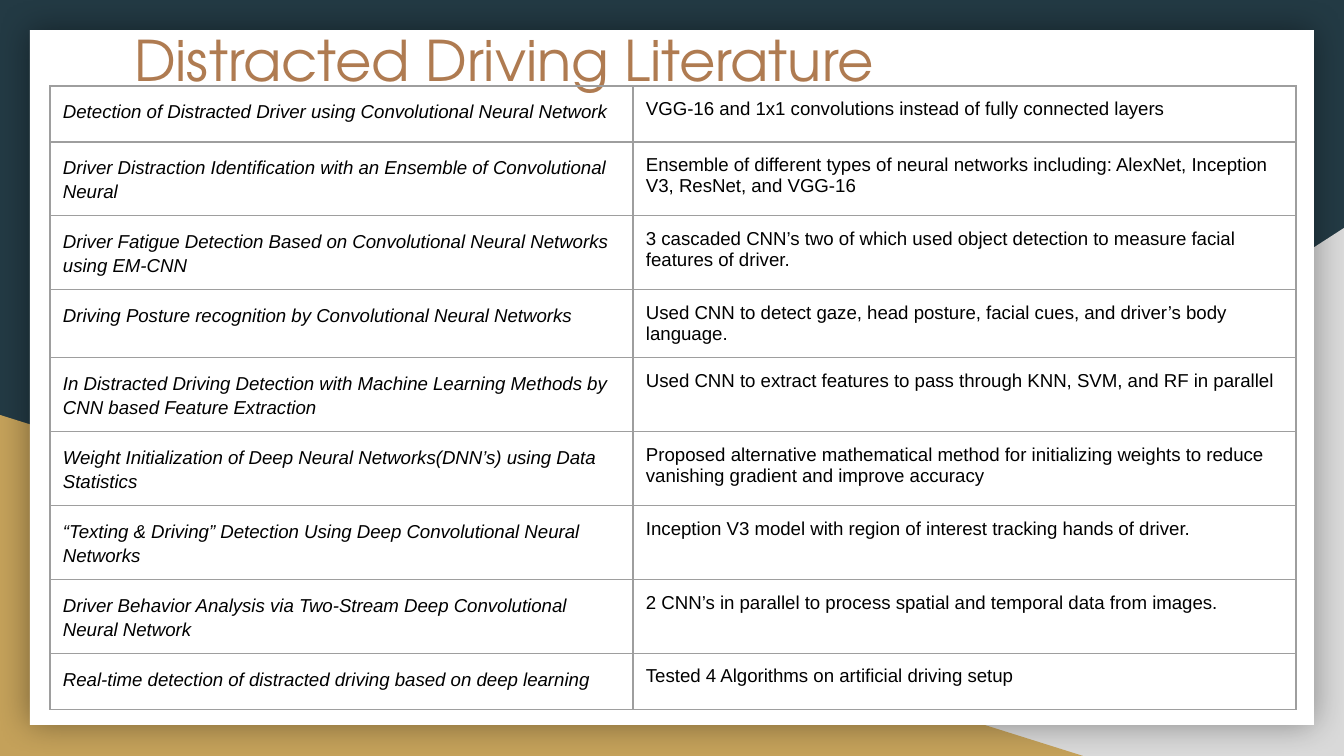
from lxml import etree
from pptx import Presentation
from pptx.dml.color import RGBColor
from pptx.enum.shapes import MSO_SHAPE
from pptx.enum.text import MSO_ANCHOR, MSO_AUTO_SIZE, PP_ALIGN
from pptx.oxml import parse_xml
from pptx.oxml.ns import nsdecls, qn
from pptx.util import Pt

RECT, TRIANGLE = MSO_SHAPE.RECTANGLE, MSO_SHAPE.RIGHT_TRIANGLE
TOP, LEFT, NO_FIT = MSO_ANCHOR.TOP, PP_ALIGN.LEFT, MSO_AUTO_SIZE.NONE

EMU_PER_PX = 914400 / 134.4
INSET = 13
COLORS = {
    "navy": "233A44",
    "gray": "D9D9D9",
    "gold": "C4A15A",
    "panel": "FFFFFF",
    "title": "AF7B51",
    "text": "000000",
    "border": "9E9E9E",
}
COLUMN_WIDTHS = [583, 663]
ROW_HEIGHTS = [56, 63, 63, 63, 56, 56, 56, 66, 56]
LITERATURE = [
    ("Detection of Distracted Driver using Convolutional Neural Network",
     "VGG-16 and 1x1 convolutions instead of fully connected layers"),
    ("Driver Distraction Identification with an Ensemble of Convolutional Neural",
     "Ensemble of different types of neural networks including: AlexNet, "
     "Inception V3, ResNet, and VGG-16"),
    ("Driver Fatigue Detection Based on Convolutional Neural Networks using EM-CNN",
     "3 cascaded CNN’s two of which used object detection to measure facial "
     "features of driver."),
    ("Driving Posture recognition by Convolutional Neural Networks",
     "Used CNN to detect gaze, head posture, facial cues, and driver’s body language."),
    ("In Distracted Driving Detection with Machine Learning Methods by CNN based "
     "Feature Extraction",
     "Used CNN to extract features to pass through KNN, SVM, and RF in parallel"),
    ("Weight Initialization of Deep Neural Networks(DNN’s) using Data Statistics",
     "Proposed alternative mathematical method for initializing weights to reduce "
     "vanishing gradient and improve accuracy"),
    ("“Texting & Driving” Detection Using Deep Convolutional Neural Networks",
     "Inception V3 model with region of interest tracking hands of driver."),
    ("Driver Behavior Analysis via Two-Stream Deep Convolutional Neural Network",
     "2 CNN’s in parallel to process spatial and temporal data from images."),
    ("Real-time detection of distracted driving based on deep learning",
     "Tested 4 Algorithms on artificial driving setup"),
]


def px(n):
    """Turn pixels into EMU."""
    return round(n * EMU_PER_PX)


def rgb(name):
    """Look up a named colour."""
    return RGBColor.from_string(COLORS[name])


def set_font(font, name, size, color, italic=False):
    """Set the face, size, colour and slant of a font."""
    font.name, font.size, font.italic = name, Pt(size), italic
    font.color.rgb = rgb(color)


def add_block(slide, kind, box, color, flip=False):
    """Add a plain filled shape without an outline."""
    sp = slide.shapes.add_shape(kind, *map(px, box))
    sp.shadow.inherit = False
    sp.fill.solid()
    sp.fill.fore_color.rgb = rgb(color)
    sp.line.fill.background()
    if flip:
        sp._element.spPr.get_or_add_xfrm().set("flipH", "1")
    return sp


def add_glow_shadow(sp):
    """Give a shape a soft, centred shadow."""
    effects = sp._element.spPr.find(qn("a:effectLst"))
    effects.append(parse_xml(
        f'<a:outerShdw {nsdecls("a")} blurRad="{Pt(18)}" dist="0" dir="0" '
        'algn="ctr" rotWithShape="0"><a:srgbClr val="000000">'
        '<a:alpha val="40000"/></a:srgbClr></a:outerShdw>'))


def set_title(slide, text, box):
    """Fill the title placeholder and bring it to the front."""
    sp = slide.shapes.title
    sp.left, sp.top, sp.width, sp.height = map(px, box)
    tf = sp.text_frame
    tf.text = text
    tf.word_wrap, tf.auto_size, tf.vertical_anchor = True, NO_FIT, TOP
    tf.margin_left = tf.margin_right = tf.margin_top = tf.margin_bottom = px(INSET)
    p = tf.paragraphs[0]
    p.alignment = LEFT
    set_font(p.font, "TeX Gyre Adventor", 30, "title")
    slide.shapes._spTree.append(sp._element)


def set_borders(cell):
    """Draw a thin line on all four sides of a cell."""
    tc_pr = cell._tc.get_or_add_tcPr()
    for side in "LRTB":
        ln = etree.SubElement(tc_pr, qn(f"a:ln{side}"), w=str(Pt(0.75)))
        fill = etree.SubElement(ln, qn("a:solidFill"))
        etree.SubElement(fill, qn("a:srgbClr"), val=COLORS["border"])


def fill_cell(cell, text, is_paper):
    """Write a paper name or its summary into a bordered cell."""
    set_borders(cell)
    cell.fill.background()
    cell.margin_left = cell.margin_right = px(INSET)
    cell.margin_top = cell.margin_bottom = px(INSET)
    cell.text = text
    p = cell.text_frame.paragraphs[0]
    set_font(p.font, "Arial", 10, "text", is_paper)
    if is_paper:
        p.line_spacing = 1.15


def add_literature_table(slide, left, top):
    """Add the table of papers and summaries."""
    frame = slide.shapes.add_table(
        len(ROW_HEIGHTS), len(COLUMN_WIDTHS), px(left), px(top),
        px(sum(COLUMN_WIDTHS)), px(sum(ROW_HEIGHTS)))
    table = frame.table
    table.first_row = table.horz_banding = False
    for column, width in zip(table.columns, COLUMN_WIDTHS):
        column.width = px(width)
    for row, height, texts in zip(table.rows, ROW_HEIGHTS, LITERATURE):
        row.height = px(height)
        for i, (cell, text) in enumerate(zip(row.cells, texts)):
            fill_cell(cell, text, i == 0)


def main():
    """Build the slide and save it."""
    prs = Presentation()
    prs.slide_width, prs.slide_height = px(1344), px(756)
    slide = prs.slides.add_slide(prs.slide_layouts[5])
    slide.background.fill.solid()
    slide.background.fill.fore_color.rgb = rgb("navy")
    add_block(slide, TRIANGLE, (527, 228, 817, 528), "gray", flip=True)
    add_block(slide, TRIANGLE, (0, 415, 1083, 341), "gold")
    add_glow_shadow(add_block(slide, RECT, (30, 30, 1284, 695), "panel"))
    set_title(slide, "Distracted Driving Literature", (121, 12, 1103, 140))
    add_literature_table(slide, 50, 86)
    prs.save("out.pptx")


if __name__ == "__main__":
    main()
